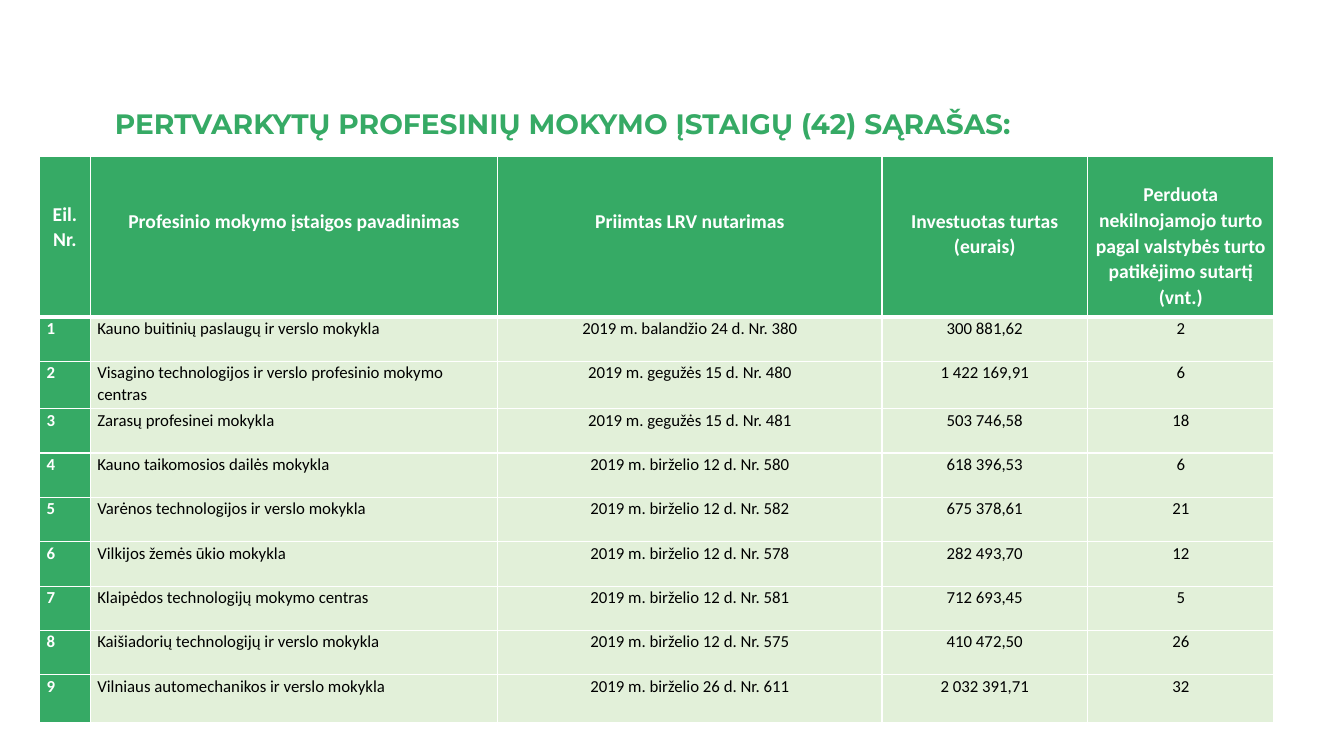
from dataclasses import dataclass

from lxml import etree
from pptx import Presentation
from pptx.dml.color import RGBColor
from pptx.enum.text import MSO_ANCHOR, PP_ALIGN
from pptx.oxml.ns import qn
from pptx.util import Inches, Pt

LEFT, CENTER = PP_ALIGN.LEFT, PP_ALIGN.CENTER
TOP, BOTTOM = MSO_ANCHOR.TOP, MSO_ANCHOR.BOTTOM
SLIDE_WIDTH, SLIDE_HEIGHT = Inches(13.33), Inches(7.5)
TITLE_ONLY = 5


@dataclass(frozen=True)
class Theme:
    green: str = "36AA65"
    pale: str = "E2F0D9"
    white: str = "FFFFFF"
    black: str = "000000"
    title_font: str = "Montserrat"
    table_font: str = "Calibri"
    title_size: int = 20
    header_size: int = 14
    body_size: int = 12
    title_spacing: float = 0.9
    table_spacing: float = 1.07
    grid_line: int = 1
    header_line: int = 3


THEME = Theme()
TITLE = "PERTVARKYTŲ PROFESINIŲ MOKYMO ĮSTAIGŲ (42) SĄRAŠAS:"
TITLE_AREA = (7.8, 10, 78, 13.2)
TABLE_AREA = (2.95, 20.7, 91.9, 74.7)
COLUMN_SHARES = (4.1, 33, 31.1, 16.65, 15.1)
HEADER_SHARE, ROW_SHARE, TALL_ROW_SHARE = 28.4, 7.86, 8.4
TALL_ROWS = (2, 9)
HEADERS = (
    ("Eil. Nr.", 0.44),
    ("Profesinio mokymo įstaigos pavadinimas", 0.51),
    ("Priimtas LRV nutarimas", 0.51),
    ("Investuotas turtas (eurais)", 0.51),
    ("Perduota nekilnojamojo turto pagal valstybės turto patikėjimo sutartį (vnt.)", 0.25),
)
SCHOOLS = (
    ("Kauno buitinių paslaugų ir verslo mokykla", "balandžio 24 d. Nr. 380", "300 881,62", 2),
    ("Visagino technologijos ir verslo profesinio mokymo centras", "gegužės 15 d. Nr. 480", "1 422 169,91", 6),
    ("Zarasų profesinei mokykla", "gegužės 15 d. Nr. 481", "503 746,58", 18),
    ("Kauno taikomosios dailės mokykla", "birželio 12 d. Nr. 580", "618 396,53", 6),
    ("Varėnos technologijos ir verslo mokykla", "birželio 12 d. Nr. 582", "675 378,61", 21),
    ("Vilkijos žemės ūkio mokykla", "birželio 12 d. Nr. 578", "282 493,70", 12),
    ("Klaipėdos technologijų mokymo centras", "birželio 12 d. Nr. 581", "712 693,45", 5),
    ("Kaišiadorių technologijų ir verslo mokykla", "birželio 12 d. Nr. 575", "410 472,50", 26),
    ("Vilniaus automechanikos ir verslo mokykla", "birželio 26 d. Nr. 611", "2 032 391,71", 32),
)


def set_format(target, values):
    for attribute, value in values.items():
        setattr(target, attribute, value)


def place(area):
    left, top, width, height = area
    return {
        "left": int(SLIDE_WIDTH * left / 100),
        "top": int(SLIDE_HEIGHT * top / 100),
        "width": int(SLIDE_WIDTH * width / 100),
        "height": int(SLIDE_HEIGHT * height / 100),
    }


def write_text(frame, text, align, spacing, color, font):
    paragraph = frame.paragraphs[0]
    set_format(paragraph, {"alignment": align, "line_spacing": spacing})
    run = paragraph.add_run()
    run.text = text
    set_format(run.font, font)
    run.font.color.rgb = RGBColor.from_string(color)


def add_title(slide):
    heading = slide.shapes.title
    set_format(heading, place(TITLE_AREA))
    set_format(heading.text_frame, {
        "word_wrap": True, "vertical_anchor": BOTTOM, "margin_bottom": Inches(0.35),
    })
    write_text(heading.text_frame, TITLE, LEFT, THEME.title_spacing, THEME.green,
               {"name": THEME.title_font, "size": Pt(THEME.title_size), "bold": True})


def draw_borders(cell, widths):
    properties = cell._tc.get_or_add_tcPr()
    for side, width in widths.items():
        line = etree.SubElement(properties, qn(f"a:ln{side}"), w=str(Pt(width)))
        fill = etree.SubElement(line, qn("a:solidFill"))
        etree.SubElement(fill, qn("a:srgbClr"), val=THEME.white)


def fill_cell(cell, text, row, column, top_margin=0):
    header, numbering = row == 0, column == 0
    strong = header or numbering
    set_format(cell, {
        "margin_left": Inches(0.07), "margin_right": Inches(0.07),
        "margin_top": Inches(top_margin), "margin_bottom": 0,
        "vertical_anchor": TOP,
    })
    draw_borders(cell, {
        "L": THEME.grid_line, "R": THEME.grid_line,
        "T": THEME.header_line if row == 1 else THEME.grid_line,
        "B": THEME.header_line if header else THEME.grid_line,
    })
    cell.fill.solid()
    cell.fill.fore_color.rgb = RGBColor.from_string(THEME.green if strong else THEME.pale)
    size = THEME.header_size if header else THEME.body_size
    write_text(cell.text_frame, text, CENTER if header or column > 1 else LEFT,
               THEME.table_spacing, THEME.white if strong else THEME.black,
               {"name": THEME.table_font, "size": Pt(size), "bold": strong})


def row_share(row):
    if row == 0:
        return HEADER_SHARE
    return TALL_ROW_SHARE if row in TALL_ROWS else ROW_SHARE


def add_school_table(slide):
    area = place(TABLE_AREA)
    table = slide.shapes.add_table(len(SCHOOLS) + 1, len(HEADERS), **area).table
    table.horz_banding = False
    for column, share in zip(table.columns, COLUMN_SHARES):
        column.width = int(area["width"] * share / 100)
    for index, row in enumerate(table.rows):
        row.height = int(area["height"] * row_share(index) / 100)
    for column, (label, top_margin) in enumerate(HEADERS):
        fill_cell(table.cell(0, column), label, 0, column, top_margin)
    for row, (school, decree, assets, properties) in enumerate(SCHOOLS, 1):
        values = (str(row), school, f"2019 m. {decree}", assets, str(properties))
        for column, value in enumerate(values):
            fill_cell(table.cell(row, column), value, row, column)


def main():
    deck = Presentation()
    set_format(deck, {"slide_width": SLIDE_WIDTH, "slide_height": SLIDE_HEIGHT})
    slide = deck.slides.add_slide(deck.slide_layouts[TITLE_ONLY])
    add_title(slide)
    add_school_table(slide)
    deck.save("out.pptx")


if __name__ == "__main__":
    main()
